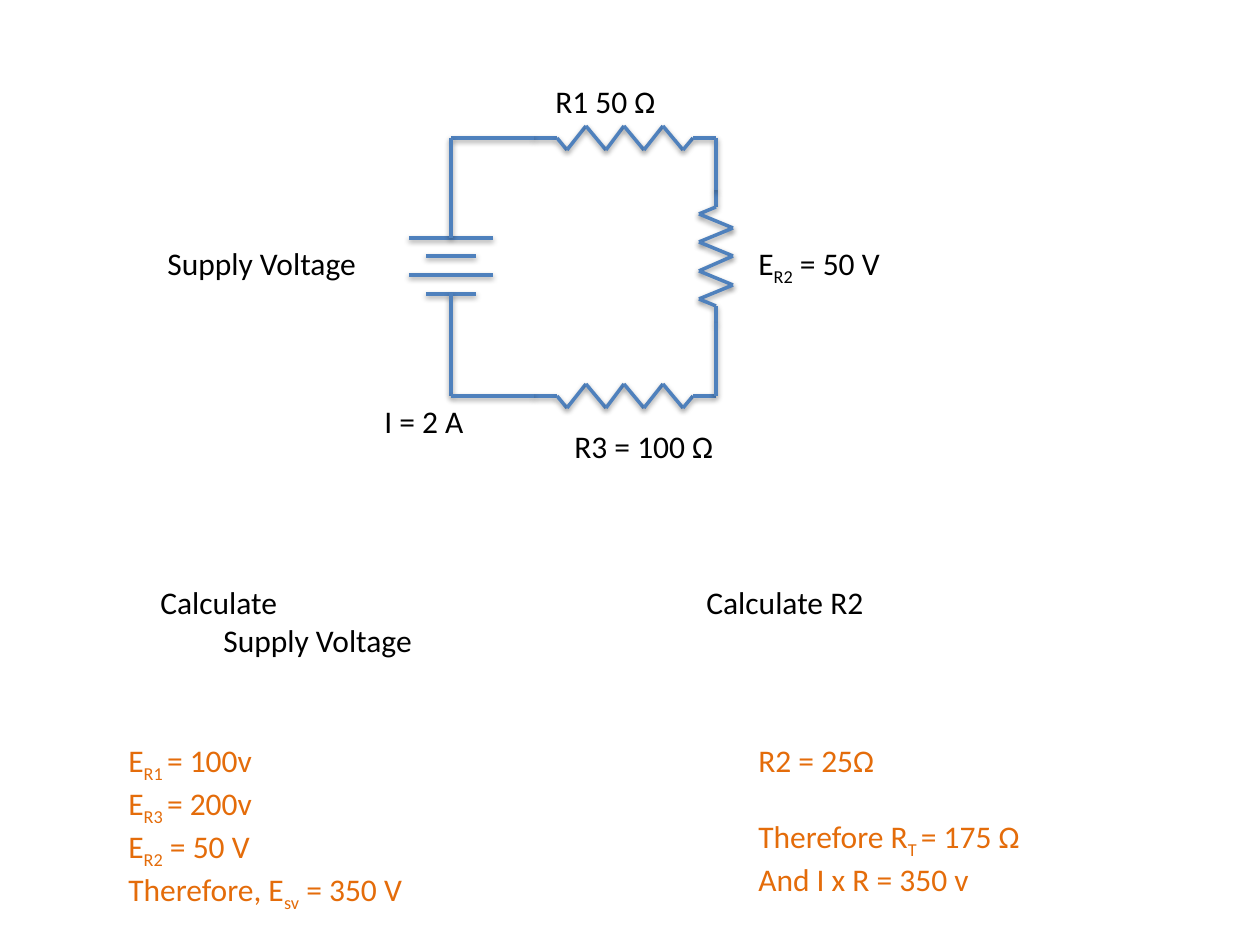
from itertools import pairwise
from lxml import etree
from pptx import Presentation
from pptx.dml.color import RGBColor
from pptx.enum.shapes import MSO_CONNECTOR as Link
from pptx.enum.text import MSO_AUTO_SIZE as Fit
from pptx.oxml import parse_xml
from pptx.util import Emu, Pt

PX = 914400 // 126
BLUE = RGBColor(0x4F, 0x81, 0xBD)
BLACK = RGBColor(0, 0, 0)
ORANGE = RGBColor(0xE4, 0x6C, 0x0A)
SHADOW = (
    '<a:effectLst xmlns:a="http://schemas.openxmlformats.org/drawingml/2006/main">'
    '<a:outerShdw blurRad="40000" dist="20000" dir="5400000" rotWithShape="0">'
    '<a:srgbClr val="000000"><a:alpha val="38000"/></a:srgbClr>'
    '</a:outerShdw></a:effectLst>')

# Circuit corners and resistor size
LEFT, RIGHT, TOP, BASE = 451, 716, 138, 396
ALONG = (0, 23, 33, 52, 72, 90, 110, 129, 149, 159, 182)
DOWN = (0, 17, 24, 38, 52, 66, 81, 95, 109, 116, 133)
SWING = (0, 0, 1, -1, 1, -1, 1, -1, 1, 0, 0)


def px(n):
    return Emu(n * PX)


def wire(slide, *points):
    """Join the points with straight, shadowed lines."""
    for (x1, y1), (x2, y2) in pairwise(points):
        line = slide.shapes.add_connector(
            Link.STRAIGHT, px(x1), px(y1), px(x2), px(y2))
        line.line.color.rgb = BLUE
        line.line.width = Pt(2)
        line._element.spPr.append(parse_xml(SHADOW))


def across(slide, x, y):
    """Horizontal resistor."""
    wire(slide, *((x + a, y + 12 * s) for a, s in zip(ALONG, SWING)))


def upright(slide, x, y):
    """Vertical resistor."""
    wire(slide, *((x - 17 * s, y + d) for d, s in zip(DOWN, SWING)))


def battery(slide, x, y):
    for i, half in enumerate((42, 25, 42, 25)):
        row = y + round(i * 18.5)
        wire(slide, (x - half, row), (x + half, row))


def label(slide, x, y, w, h, lines, color=BLACK, wrap=False):
    """Text box; words between underscores become subscripts."""
    box = slide.shapes.add_textbox(px(x), px(y), px(w), px(h))
    frame = box.text_frame
    frame.word_wrap = wrap
    frame.auto_size = Fit.SHAPE_TO_FIT_TEXT
    for i, line in enumerate(lines):
        para = frame.paragraphs[0] if i == 0 else frame.add_paragraph()
        for j, part in enumerate(line.split("_")):
            run = para.add_run()
            run.text = part
            run.font.size = Pt(18)
            run.font.name = "Calibri"
            run.font.color.rgb = color
            if j % 2:
                run._r.get_or_add_rPr().set("baseline", "-25000")
    return frame.paragraphs


def main():
    prs = Presentation()
    prs.slide_width, prs.slide_height = px(1260), px(945)
    slide = prs.slides.add_slide(prs.slide_layouts[6])

    # Circuit
    battery(slide, LEFT, 238)
    across(slide, 534, TOP)
    upright(slide, RIGHT, 190)
    across(slide, 534, BASE)
    wire(slide, (534, TOP), (LEFT, TOP), (LEFT, 238))
    wire(slide, (LEFT, 293), (LEFT, BASE), (534, BASE))
    wire(slide, (RIGHT, TOP), (RIGHT, 190))
    wire(slide, (RIGHT, 323), (RIGHT, BASE))

    # Circuit labels
    label(slide, 543, 76, 126, 50, ["R1 50 Ω"])
    label(slide, 372, 396, 106, 50, ["I = 2 A"])
    label(slide, 746, 238, 151, 50, ["E_R2_ = 50 V"])
    label(slide, 562, 421, 166, 50, ["R3 = 100 Ω"])
    label(slide, 155, 238, 216, 50, ["Supply Voltage"])

    # Questions
    task = label(slide, 148, 577, 280, 89, ["Calculate", "Supply Voltage"])
    task[1]._p.get_or_add_pPr().set("marL", str(px(63)))
    label(slide, 694, 577, 184, 50, ["Calculate R2"])

    # Answers
    label(slide, 116, 735, 378, 185,
          ["E_R1 _= 100v", "E_R3 _= 200v", "E_R2_ = 50 V",
           "Therefore, E_sv_ = 350 V"], ORANGE, wrap=True)
    proof = label(slide, 746, 735, 291, 165,
                  ["R2 = 25Ω", "Therefore R_T _= 175 Ω",
                   "And I x R = 350 v"], ORANGE)
    proof[1].space_before = Pt(22)

    prs.save("out.pptx")


if __name__ == "__main__":
    main()
